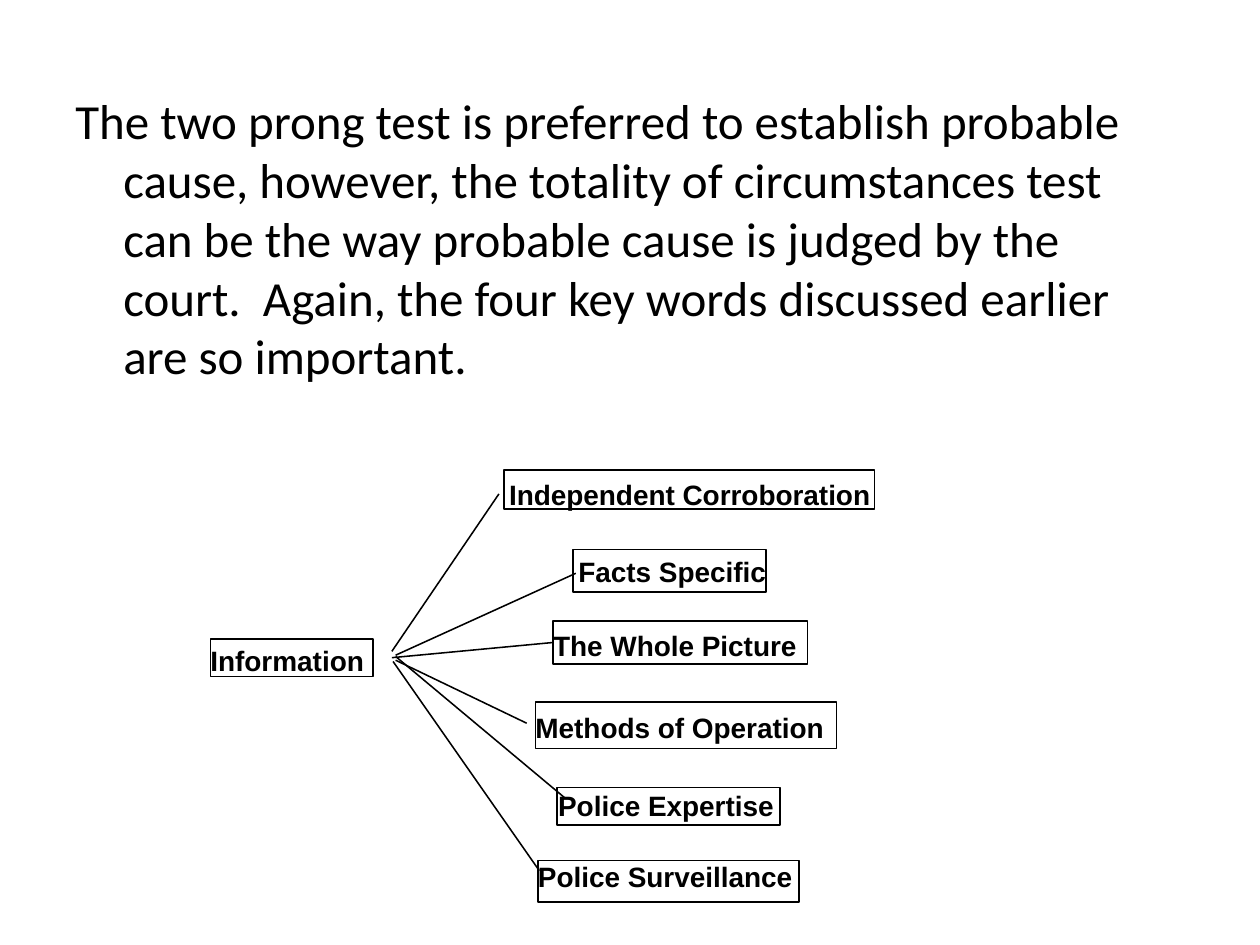
from typing import NamedTuple

from lxml.etree import SubElement
from pptx import Presentation
from pptx.dml.color import RGBColor
from pptx.enum.shapes import MSO_CONNECTOR, MSO_SHAPE
from pptx.enum.text import MSO_ANCHOR, PP_ALIGN
from pptx.oxml.ns import qn
from pptx.slide import Slide
from pptx.text.text import TextFrame
from pptx.util import Inches, Pt

BLACK = "000000"
LINE_WIDTH = Pt(0.88)
LABEL_HEIGHT = 0.27

STATEMENT = (
    "The two prong test is preferred to establish probable cause, however, "
    "the totality of circumstances test can be the way probable cause is "
    "judged by the court.  Again, the four key words discussed earlier are "
    "so important."
)


class Box(NamedTuple):
    left: float
    top: float
    width: float
    height: float


class Node(NamedTuple):
    text: str
    frame: Box
    label: Box


class Ray(NamedTuple):
    start: tuple[float, float]
    end: tuple[float, float]


NODES = [
    Node("Information", Box(1.67, 5.07, 1.29, 0.3), Box(1.67, 5.11, 1.22, LABEL_HEIGHT)),
    Node("Independent Corroboration", Box(4, 3.73, 2.94, 0.31), Box(4.04, 3.79, 2.88, LABEL_HEIGHT)),
    Node("Facts Specific", Box(4.55, 4.36, 1.53, 0.34), Box(4.59, 4.4, 1.51, LABEL_HEIGHT)),
    Node("The Whole Picture", Box(4.39, 4.93, 2.02, 0.34), Box(4.39, 4.99, 1.94, LABEL_HEIGHT)),
    Node("Methods of Operation", Box(4.25, 5.57, 2.39, 0.37), Box(4.25, 5.64, 2.3, LABEL_HEIGHT)),
    Node("Police Expertise", Box(4.42, 6.25, 1.77, 0.3), Box(4.43, 6.26, 1.72, LABEL_HEIGHT)),
    Node("Police Surveillance", Box(4.27, 6.83, 2.07, 0.33), Box(4.27, 6.82, 2.03, LABEL_HEIGHT)),
]

RAYS = [
    Ray((3.11, 5.17), (3.96, 3.92)),
    Ray((3.14, 5.2), (4.57, 4.55)),
    Ray((3.11, 5.22), (4.38, 5.1)),
    Ray((3.14, 5.24), (4.18, 5.74)),
    Ray((3.14, 5.21), (4.48, 6.33)),
    Ray((3.12, 5.25), (4.28, 6.91)),
]


def color(value: str) -> RGBColor:
    return RGBColor.from_string(value)


def add_text(slide: Slide, box: Box, text: str, font_name: str,
             size: float, bold: bool = False) -> TextFrame:
    shape = slide.shapes.add_textbox(*map(Inches, box))
    text_frame = shape.text_frame
    text_frame.text = text
    text_frame.vertical_anchor = MSO_ANCHOR.TOP
    paragraph = text_frame.paragraphs[0]
    paragraph.alignment = PP_ALIGN.LEFT
    font = paragraph.runs[0].font
    font.name, font.size, font.bold = font_name, Pt(size), bold
    font.color.rgb = color(BLACK)
    return text_frame


def add_statement(slide: Slide) -> None:
    text_frame = add_text(slide, Box(0.5, 0.67, 8.92, 3), STATEMENT, "Calibri", 28)
    text_frame.word_wrap = True
    # Hanging indent
    properties = text_frame.paragraphs[0]._p.get_or_add_pPr()
    properties.set("marL", str(Inches(0.38)))
    properties.set("indent", str(Inches(-0.38)))


def add_node(slide: Slide, node: Node) -> None:
    frame = slide.shapes.add_shape(MSO_SHAPE.RECTANGLE, *map(Inches, node.frame))
    frame.shadow.inherit = False
    frame.fill.background()
    frame.line.color.rgb = color(BLACK)
    frame.line.width = LINE_WIDTH

    text_frame = add_text(slide, node.label, node.text, "Arial", 16, bold=True)
    text_frame.word_wrap = False
    text_frame.margin_left = text_frame.margin_right = 0
    text_frame.margin_top = text_frame.margin_bottom = 0


def add_ray(slide: Slide, ray: Ray) -> None:
    connector = slide.shapes.add_connector(
        MSO_CONNECTOR.STRAIGHT, *map(Inches, ray.start + ray.end))
    connector.line.color.rgb = color(BLACK)
    connector.line.width = LINE_WIDTH
    SubElement(connector._element.spPr, qn("a:effectLst"))


def main() -> None:
    presentation = Presentation()
    presentation.slide_width = Inches(10)
    presentation.slide_height = Inches(7.5)
    slide = presentation.slides.add_slide(presentation.slide_layouts[6])

    # Statement above the diagram
    add_statement(slide)

    # Information fanning out to its six sources
    for node in NODES:
        add_node(slide, node)
    for ray in RAYS:
        add_ray(slide, ray)

    presentation.save("out.pptx")


if __name__ == "__main__":
    main()
